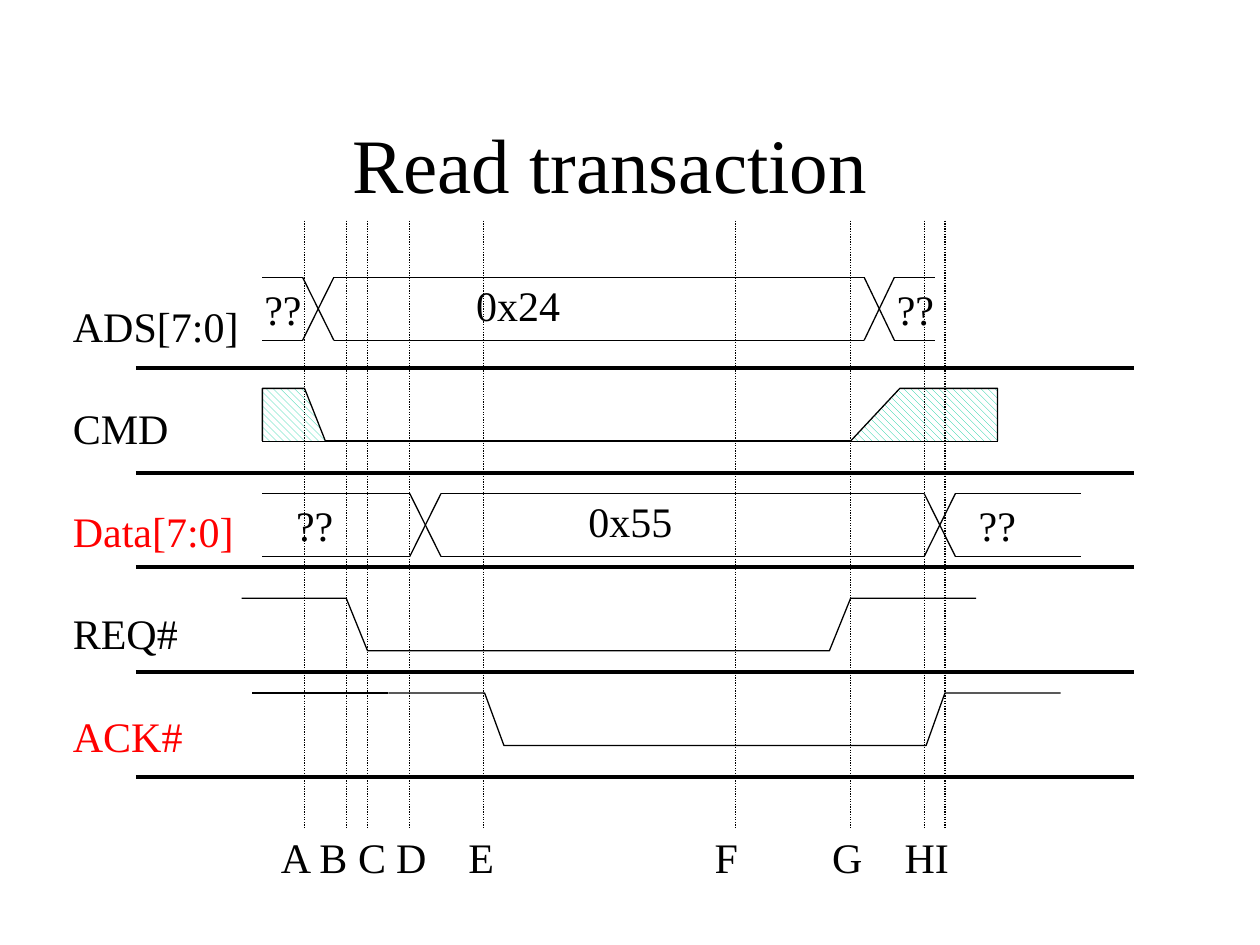
from pptx import Presentation
from pptx.dml.color import RGBColor
from pptx.enum.dml import MSO_LINE, MSO_PATTERN
from pptx.enum.shapes import MSO_CONNECTOR
from pptx.enum.text import MSO_ANCHOR, PP_ALIGN
from pptx.oxml.ns import qn
from pptx.util import Cm, Pt
from lxml import etree

COLORS = {"black": "000000", "white": "FFFFFF", "red": "FF0000", "hatch": "00CC99"}
COLORS = {name: RGBColor.from_string(value) for name, value in COLORS.items()}
FONT = "Times New Roman"

presentation = Presentation()
presentation.slide_width = Cm(25.4)
presentation.slide_height = Cm(19.05)
slide = presentation.slides.add_slide(presentation.slide_layouts[6])
shapes = slide.shapes


def add_text(text, left, top, width, height=1.27, size=24, colors=("black",),
             align=PP_ALIGN.LEFT, anchor=MSO_ANCHOR.TOP, wrap=False, gap=0):
    """Add a text box with one paragraph per line; colors are used in turn."""
    frame = shapes.add_textbox(Cm(left), Cm(top), Cm(width), Cm(height)).text_frame
    frame.word_wrap = wrap
    frame.vertical_anchor = anchor
    for index, line in enumerate(text.split("\n")):
        paragraph = frame.add_paragraph() if index else frame.paragraphs[0]
        paragraph.alignment = align
        paragraph.space_after = Pt(gap)
        run = paragraph.add_run()
        run.text = line
        run.font.name = FONT
        run.font.size = Pt(size)
        run.font.color.rgb = COLORS[colors[index % len(colors)]]


def add_path(points, weight=0.75, dash=None, hatched=False):
    """Draw a connector through two points, or an open outline through more."""
    points = [(Cm(x), Cm(y)) for x, y in points]
    if len(points) == 2:
        shape = shapes.add_connector(MSO_CONNECTOR.STRAIGHT, *points[0], *points[1])
        etree.SubElement(shape._element.spPr, qn("a:effectLst"))
    else:
        builder = shapes.build_freeform(*points[0])
        builder.add_line_segments(points[1:], close=False)
        shape = builder.convert_to_shape()
        shape.shadow.inherit = False
        if hatched:
            shape.fill.patterned()
            shape.fill.pattern = MSO_PATTERN.WIDE_DOWNWARD_DIAGONAL
            shape.fill.fore_color.rgb = COLORS["hatch"]
            shape.fill.back_color.rgb = COLORS["white"]
        else:
            shape.fill.background()
    shape.line.color.rgb = COLORS["black"]
    shape.line.width = Pt(weight)
    if dash:
        shape.line.dash_style = dash


# Title and signal names
add_text("Read transaction", 1.5, 1.7, 21.59, 3.18, size=44, wrap=True,
         align=PP_ALIGN.CENTER, anchor=MSO_ANCHOR.MIDDLE)
add_text("ADS[7:0]\nCMD\nData[7:0]\nREQ#\nACK#", 1.22, 5.93, 3.86, 9.37, gap=29.8,
         colors=("black", "black", "red", "black", "red"))

# Rules under each signal
for y in (7.41, 9.53, 11.43, 13.55, 15.66):
    add_path([(2.74, y), (22.86, y)], weight=2.25)

# Bus signals: horizontal edges between crossings
BUS_HEIGHT = 1.27
buses = [
    (5.59, (5.29, 6.1, 6.73, 17.42, 18.03, 18.85)),
    (9.95, (5.29, 8.26, 8.89, 18.63, 19.26, 21.8)),
]
for top, (start, cross_1, end_1, cross_2, end_2, stop) in buses:
    bottom = top + BUS_HEIGHT
    for x1, x2 in ((start, cross_1), (end_1, cross_2), (end_2, stop)):
        for y in (top, bottom):
            add_path([(x1, y), (x2, y)])
    for x1, x2 in ((cross_1, end_1), (cross_2, end_2)):
        add_path([(x1, top), (x2, bottom)])
        add_path([(x2, top), (x1, bottom)])

# Bus values
for value, left, top, width, wrap in [
    ("??", 5.08, 5.59, 1.27, False),
    ("0x24", 9.35, 5.51, 2.21, False),
    ("??", 17.83, 5.59, 1.27, False),
    ("??", 5.72, 9.95, 2.77, True),
    ("0x55", 11.61, 9.86, 2.21, False),
    ("??", 19.48, 9.95, 4.01, True),
]:
    add_text(value, left, top, width, wrap=wrap)

# CMD: low level with undefined regions at both ends
cmd_high, cmd_low = 7.83, 8.89
add_path([(5.29, cmd_low), (20.11, cmd_low)])
for outer, shoulder, foot in ((5.29, 6.14, 6.56), (20.11, 18.14, 17.15)):
    add_path([(outer, cmd_low), (outer, cmd_high), (shoulder, cmd_high),
              (foot, cmd_low)], hatched=True)

# Active-low handshake pulses
PULSE_HEIGHT = 1.06
pulses = [
    (12.06, (4.87, 6.98, 7.41, 16.72, 17.15, 19.68)),
    (13.97, (7.83, 9.77, 10.16, 18.67, 19.05, 21.38)),
]
for high, xs in pulses:
    low = high + PULSE_HEIGHT
    add_path(list(zip(xs, (high, high, low, low, high, high))))
add_path([(7.83, 13.97), (5.08, 13.97)])

# Time markers: letter, line position, letter centre
LETTER_WIDTH = 1.27
for letter, x, center in [
    ("A", 6.14, 5.97), ("B", 6.98, 6.72), ("C", 7.41, 7.5),
    ("D", 8.26, 8.29), ("E", 9.74, 9.7), ("F", 14.82, 14.64),
    ("G", 17.15, 17.08), ("H", 18.63, 18.54), ("I", 19.05, 18.99),
]:
    add_path([(x, 4.45), (x, 16.72)], dash=MSO_LINE.ROUND_DOT)
    add_text(letter, center - LETTER_WIDTH / 2, 16.64, LETTER_WIDTH,
             align=PP_ALIGN.CENTER)

presentation.save("out.pptx")
